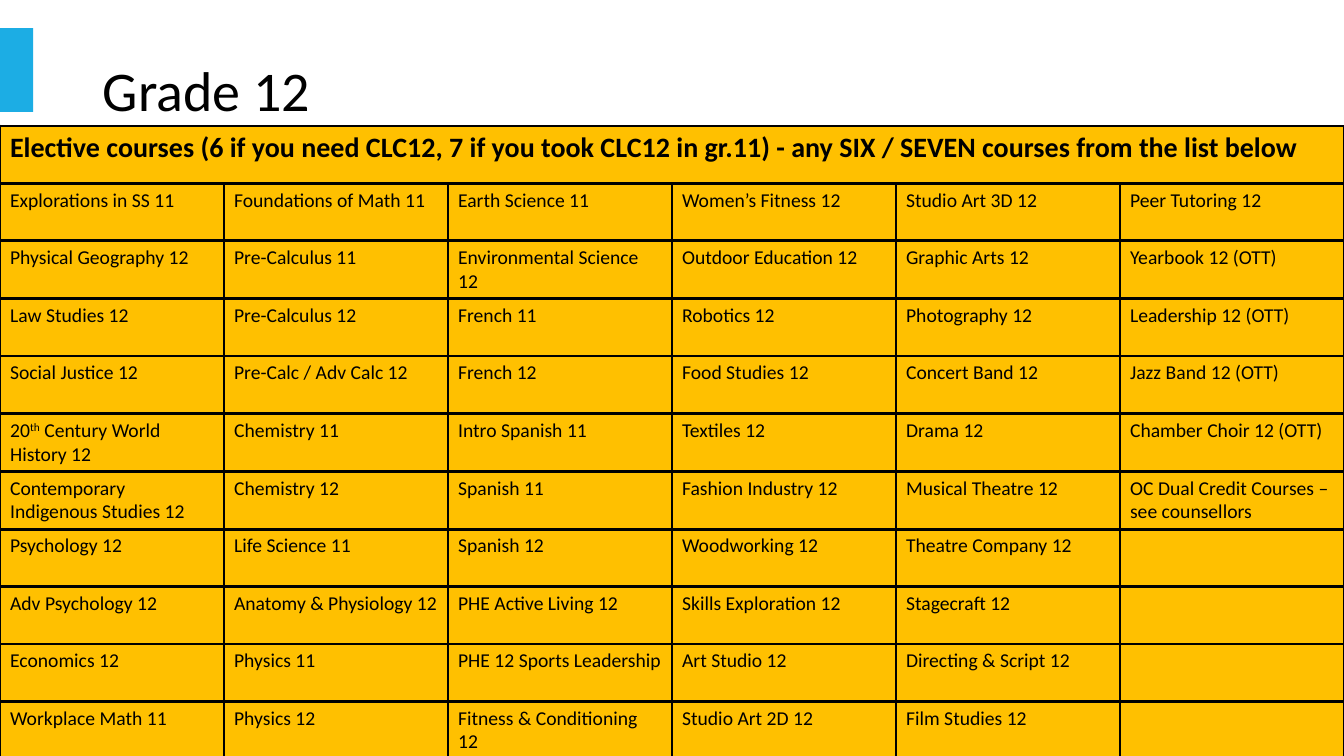
from itertools import zip_longest

from lxml import etree
from pptx import Presentation
from pptx.dml.color import RGBColor
from pptx.enum.shapes import MSO_SHAPE
from pptx.enum.text import MSO_ANCHOR, PP_ALIGN
from pptx.oxml.ns import qn
from pptx.util import Inches, Pt

RECT = MSO_SHAPE.RECTANGLE
MIDDLE = MSO_ANCHOR.MIDDLE
LEFT = PP_ALIGN.LEFT
BLACK = RGBColor(0x00, 0x00, 0x00)
BLUE = RGBColor(0x1C, 0xAD, 0xE4)
GOLD = RGBColor(0xFF, 0xC0, 0x00)
FONT = "Calibri"
WIDE, HIGH = Inches(13.33), Inches(7.5)
ROW = Inches(0.57)
RULE = Pt(2.25)

HEAD = ("Elective courses (6 if you need CLC12, 7 if you took CLC12 in gr.11)"
        " - any SIX / SEVEN courses from the list below")
SUPER = "th"
COURSES = [
    ["Explorations in SS 11", "Physical Geography 12", "Law Studies 12",
     "Social Justice 12", ("20", SUPER, " Century World History 12"),
     "Contemporary Indigenous Studies 12", "Psychology 12",
     "Adv Psychology 12", "Economics 12", "Workplace Math 11"],
    ["Foundations of Math 11", "Pre-Calculus 11", "Pre-Calculus 12",
     "Pre-Calc / Adv Calc 12", "Chemistry 11", "Chemistry 12",
     "Life Science 11", "Anatomy & Physiology 12", "Physics 11",
     "Physics 12"],
    ["Earth Science 11", "Environmental Science 12", "French 11",
     "French 12", "Intro Spanish 11", "Spanish 11", "Spanish 12",
     "PHE Active Living 12", "PHE 12 Sports Leadership",
     "Fitness & Conditioning 12"],
    ["Women’s Fitness 12", "Outdoor Education 12", "Robotics 12",
     "Food Studies 12", "Textiles 12", "Fashion Industry 12",
     "Woodworking 12", "Skills Exploration 12", "Art Studio 12",
     "Studio Art 2D 12"],
    ["Studio Art 3D 12", "Graphic Arts 12", "Photography 12",
     "Concert Band 12", "Drama 12", "Musical Theatre 12",
     "Theatre Company 12", "Stagecraft 12", "Directing & Script 12",
     "Film Studies 12"],
    ["Peer Tutoring 12", "Yearbook 12 (OTT)", "Leadership 12 (OTT)",
     "Jazz Band 12 (OTT)", "Chamber Choir 12 (OTT)",
     "OC Dual Credit Courses – see counsellors"],
]


def add_run(para, text, size, bold=False):
    run = para.add_run()
    run.text = text
    run.font.name = FONT
    run.font.size = Pt(size)
    run.font.bold = bold
    run.font.color.rgb = BLACK
    return run


def add_bar(slide):
    bar = slide.shapes.add_shape(RECT, 0, Inches(0.28),
                                 Inches(0.33), Inches(0.83))
    bar.shadow.inherit = False
    bar.fill.solid()
    bar.fill.fore_color.rgb = BLUE
    bar.line.fill.background()


def set_title(slide, text):
    title = slide.shapes.title
    title.left, title.top = Inches(0.92), Inches(0.2)
    title.width, title.height = Inches(11.5), Inches(1.45)
    frame = title.text_frame
    frame.vertical_anchor = MIDDLE
    para = frame.paragraphs[0]
    para.alignment = LEFT
    para.line_spacing = 0.9
    add_run(para, text, 40)


def style_cell(cell):
    props = cell._tc.get_or_add_tcPr()
    for side in ("lnL", "lnR", "lnT", "lnB"):
        line = etree.SubElement(props, qn("a:" + side), w=str(RULE))
        fill = etree.SubElement(line, qn("a:solidFill"))
        etree.SubElement(fill, qn("a:srgbClr"), val=str(BLACK))
    cell.fill.solid()
    cell.fill.fore_color.rgb = GOLD


def fill_cell(cell, parts):
    para = cell.text_frame.paragraphs[0]
    for part in [parts] if isinstance(parts, str) else parts:
        run = add_run(para, part, 14)
        if part == SUPER:
            run._r.get_or_add_rPr().set("baseline", "30000")


def add_grid(slide):
    rows = list(zip_longest(*COURSES, fillvalue=()))
    count = len(rows) + 1
    span = len(COURSES)
    table = slide.shapes.add_table(count, span, 0, Inches(1.25),
                                   WIDE, ROW * count).table
    for line in table.rows:
        line.height = ROW
    for cell in table.iter_cells():
        style_cell(cell)
    first = table.cell(0, 0)
    first.merge(table.cell(0, span - 1))
    add_run(first.text_frame.paragraphs[0], HEAD, 20, True)
    for r, row in enumerate(rows, 1):
        for c, parts in enumerate(row):
            fill_cell(table.cell(r, c), parts)


def main():
    deck = Presentation()
    deck.slide_width, deck.slide_height = WIDE, HIGH
    slide = deck.slides.add_slide(deck.slide_layouts[5])
    add_bar(slide)
    set_title(slide, "Grade 12")
    add_grid(slide)
    deck.save("out.pptx")


if __name__ == "__main__":
    main()
